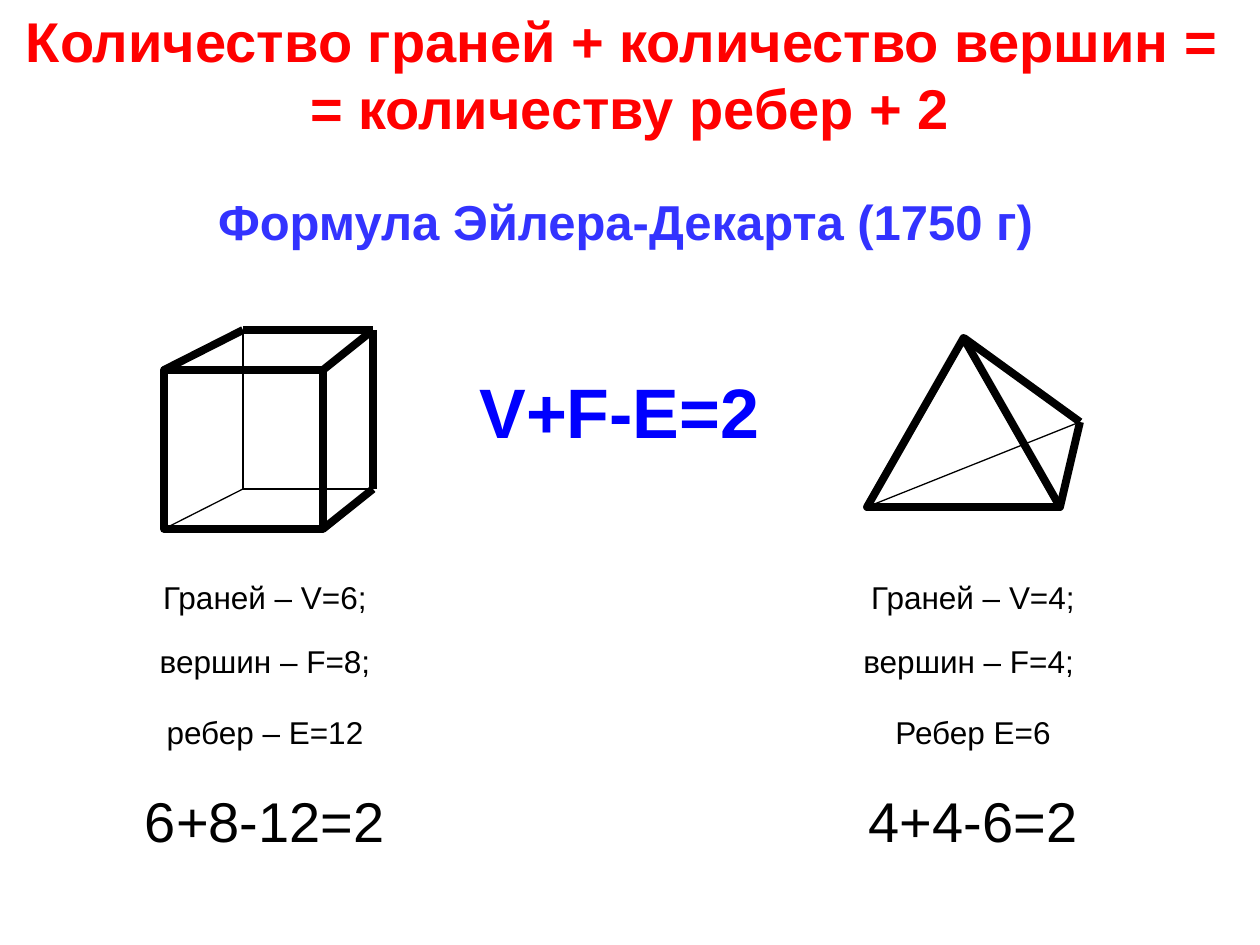
from lxml import etree
from pptx import Presentation
from pptx import util as u
from pptx.dml.color import RGBColor
from pptx.enum import shapes, text
from pptx.oxml.ns import qn

COLORS = {"paper": "FFFFFF", "ink": "000000", "rule": "FF0000",
          "subtitle": "3333FF", "formula": "0000FF"}
THICK, THIN = 4.5, 0.75


def px(value):
    return u.Emu(round(value * 914400 / 126))


def write(box, lines, size, color, bold=False, align=text.PP_ALIGN.CENTER, wrap=True):
    box.fill.solid()
    box.fill.fore_color.rgb = RGBColor.from_string(COLORS["paper"])
    frame = box.text_frame
    frame.word_wrap = wrap
    frame.auto_size = text.MSO_AUTO_SIZE.SHAPE_TO_FIT_TEXT
    frame.vertical_anchor = text.MSO_ANCHOR.TOP
    for index, line in enumerate(lines):
        paragraph = frame.add_paragraph() if index else frame.paragraphs[0]
        paragraph.alignment = align
        run = paragraph.add_run()
        run.text = line
        run.font.name = "Arial"
        run.font.size = u.Pt(size)
        run.font.bold = bold
        run.font.color.rgb = RGBColor.from_string(COLORS[color])


prs = Presentation()
prs.slide_width, prs.slide_height = px(1260), px(945)
slide = prs.slides.add_slide(prs.slide_layouts[5])

rule = slide.shapes.title
rule.left, rule.top, rule.width, rule.height = px(0), px(0), px(1260), px(149)
write(rule, ["Количество граней + количество вершин = ", "= количеству ребер + 2"],
      32, "rule", bold=True)

faces = [
    (shapes.MSO_SHAPE.RECTANGLE, 164, 370, 159, 159),
    (shapes.MSO_SHAPE.ISOSCELES_TRIANGLE, 867, 338, 193, 169),
]
for kind, left, top, width, height in faces:
    face = slide.shapes.add_shape(kind, px(left), px(top), px(width), px(height))
    face.shadow.inherit = False
    face.fill.background()
    face.line.color.rgb = RGBColor.from_string(COLORS["ink"])
    face.line.width = u.Pt(THICK)

edges = [
    (164, 370, 243, 330, THICK),
    (243, 330, 373, 330, THICK),
    (323, 370, 373, 330, THICK),
    (373, 330, 373, 489, THICK),
    (323, 529, 373, 489, THICK),
    (243, 330, 243, 489, THIN),
    (164, 529, 243, 489, THIN),
    (243, 489, 373, 489, THIN),
    (964, 338, 1080, 422, THICK),
    (1080, 422, 1060, 507, THICK),
    (867, 507, 1080, 422, THIN),
]
for x1, y1, x2, y2, weight in edges:
    edge = slide.shapes.add_connector(shapes.MSO_CONNECTOR.STRAIGHT,
                                      px(x1), px(y1), px(x2), px(y2))
    edge.line.color.rgb = RGBColor.from_string(COLORS["ink"])
    edge.line.width = u.Pt(weight)
    etree.SubElement(edge._element.spPr, qn("a:effectLst"))

subtitle = slide.shapes.add_textbox(px(203), px(185), px(845), px(72))
write(subtitle, ["Формула Эйлера-Декарта (1750 г)"], 28, "subtitle", bold=True, wrap=False)

rows = [(572, 50, 18), (636, 50, 18), (707, 50, 18), (780, 81, 32)]
solids = [
    (129, 272, ["Граней – V=6;", "вершин – F=8;", "ребер – E=12", "6+8-12=2"]),
    (844, 258, ["Граней – V=4;", "вершин – F=4; ", "Ребер E=6", "4+4-6=2"]),
]
for left, width, counts in solids:
    for (top, height, size), count in zip(rows, counts):
        label = slide.shapes.add_textbox(px(left), px(top), px(width), px(height))
        write(label, [count], size, "ink")

formula = slide.shapes.add_textbox(px(467), px(362), px(309), px(97))
write(formula, ["V+F-E=2"], 40, "formula", bold=True, align=text.PP_ALIGN.LEFT, wrap=False)

prs.save("out.pptx")
